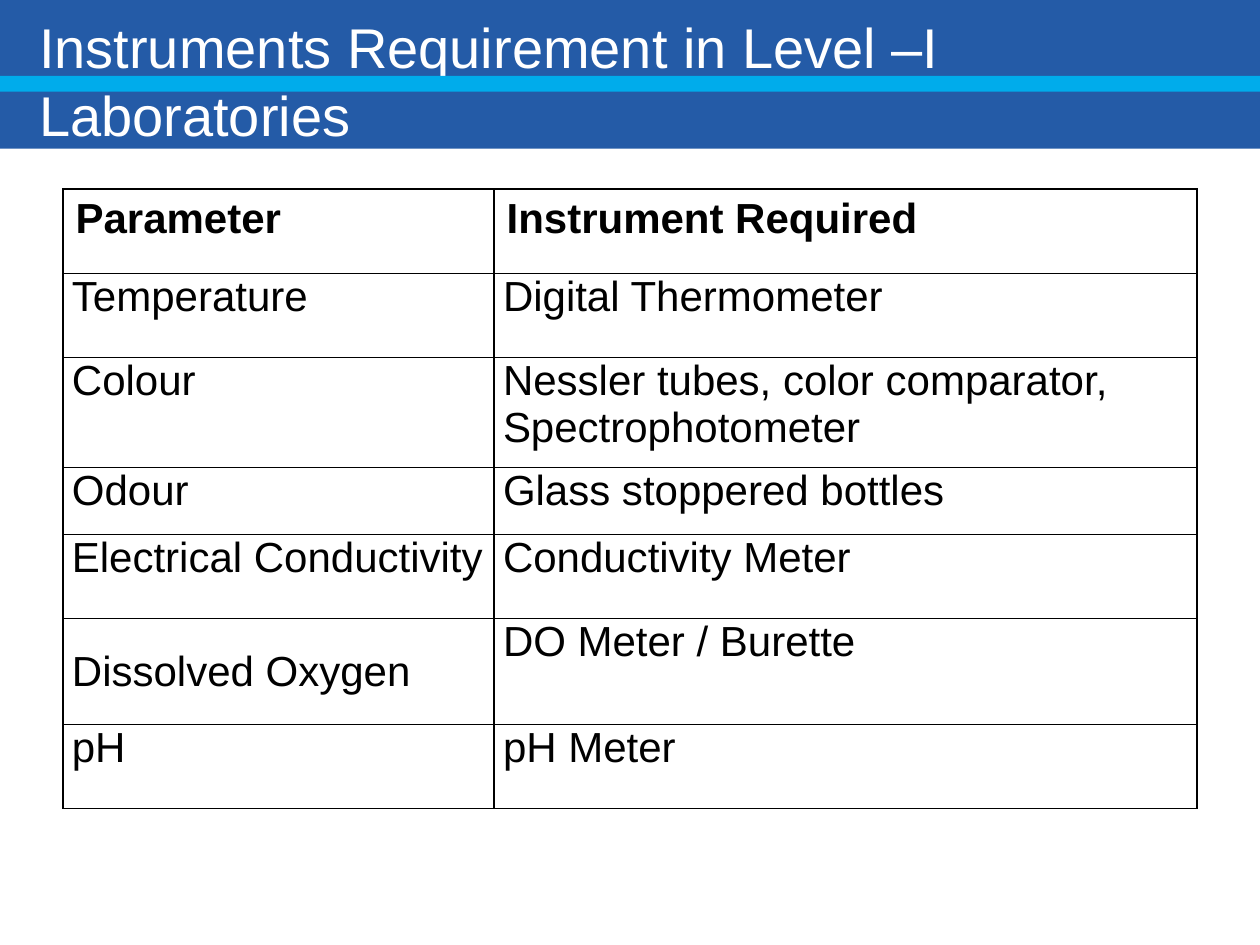
"""Build the slide listing the instruments required in level I laboratories."""
from dataclasses import dataclass

from lxml import etree
from pptx import Presentation
from pptx import util as u
from pptx.dml.color import RGBColor
from pptx.enum import shapes, text
from pptx.oxml import ns


@dataclass(frozen=True)
class Theme:
    font: str = "Arial"
    banner: str = "245BA7"
    stripe: str = "00ACEB"
    paper: str = "FFFFFF"
    ink: str = "000000"
    title_size: int = 32
    body_size: int = 24
    rule_width: int = 1


theme = Theme()


def add_run(paragraph, wording, size, colour, bold=False):
    run = paragraph.add_run()
    run.text = wording
    run.font.name = theme.font
    run.font.size = u.Pt(size)
    run.font.bold = bold
    run.font.color.rgb = RGBColor.from_string(colour)


def add_band(top, height, colour):
    band = slide.shapes.add_shape(
        shapes.MSO_SHAPE.RECTANGLE, 0, u.Cm(top), deck.slide_width, u.Cm(height))
    band.shadow.inherit = False
    band.fill.solid()
    band.fill.fore_color.rgb = RGBColor.from_string(colour)
    band.line.fill.background()
    return band


deck = Presentation()
deck.slide_width, deck.slide_height = u.Cm(25.4), u.Cm(19.05)
slide = deck.slides.add_slide(deck.slide_layouts[6])

banner = add_band(-0.1, 3.1, theme.banner)
title = banner.text_frame
title.word_wrap = True
title.vertical_anchor = text.MSO_ANCHOR.TOP
title.margin_left = title.margin_right = title.margin_bottom = 0
title.margin_top = u.Cm(0.36)
heading = title.paragraphs[0]
heading.alignment = text.PP_ALIGN.LEFT
heading.space_before = u.Pt(9.9)
heading_format = heading._p.get_or_add_pPr()
heading_format.set("marL", str(u.Cm(0.79)))
heading_format.set("indent", "0")
add_run(heading, "Instruments Requirement in Level –I Laboratories",
        theme.title_size, theme.paper)

add_band(1.53, 0.32, theme.stripe)

instruments = [
    ("Parameter", "Instrument Required", 1.7),
    ("Temperature", "Digital Thermometer", 1.7),
    ("Colour", "Nessler tubes, color comparator, Spectrophotometer", 2.21),
    ("Odour", "Glass stoppered bottles", 1.35),
    ("Electrical Conductivity", "Conductivity Meter", 1.7),
    ("Dissolved Oxygen", "DO Meter / Burette", 2.13),
    ("pH", "pH Meter", 1.7),
]
column_widths = (8.69, 14.17)
table = slide.shapes.add_table(
    len(instruments), len(column_widths), u.Cm(1.27), u.Cm(3.81),
    u.Cm(sum(column_widths)), u.Cm(sum(row[-1] for row in instruments))).table
for column, width in zip(table.columns, column_widths):
    column.width = u.Cm(width)

for row_index, (parameter, instrument, height) in enumerate(instruments):
    table.rows[row_index].height = u.Cm(height)
    is_header = row_index == 0
    for column_index, wording in enumerate((parameter, instrument)):
        cell = table.cell(row_index, column_index)
        if not is_header:
            cell.margin_left = cell.margin_right = u.Cm(0.18)
            cell.margin_top = cell.margin_bottom = 0
        if wording == "Dissolved Oxygen":
            cell.vertical_anchor = text.MSO_ANCHOR.MIDDLE
        add_run(cell.text_frame.paragraphs[0], wording,
                theme.body_size, theme.ink, is_header)
        cell_format = cell._tc.get_or_add_tcPr()
        for side in ("lnL", "lnR", "lnT", "lnB"):
            rule = etree.SubElement(cell_format, ns.qn(f"a:{side}"),
                                    w=str(u.Pt(theme.rule_width)))
            ink = etree.SubElement(rule, ns.qn("a:solidFill"))
            etree.SubElement(ink, ns.qn("a:srgbClr"), val=theme.ink)
        cell.fill.solid()
        cell.fill.fore_color.rgb = RGBColor.from_string(theme.paper)

deck.save("out.pptx")
